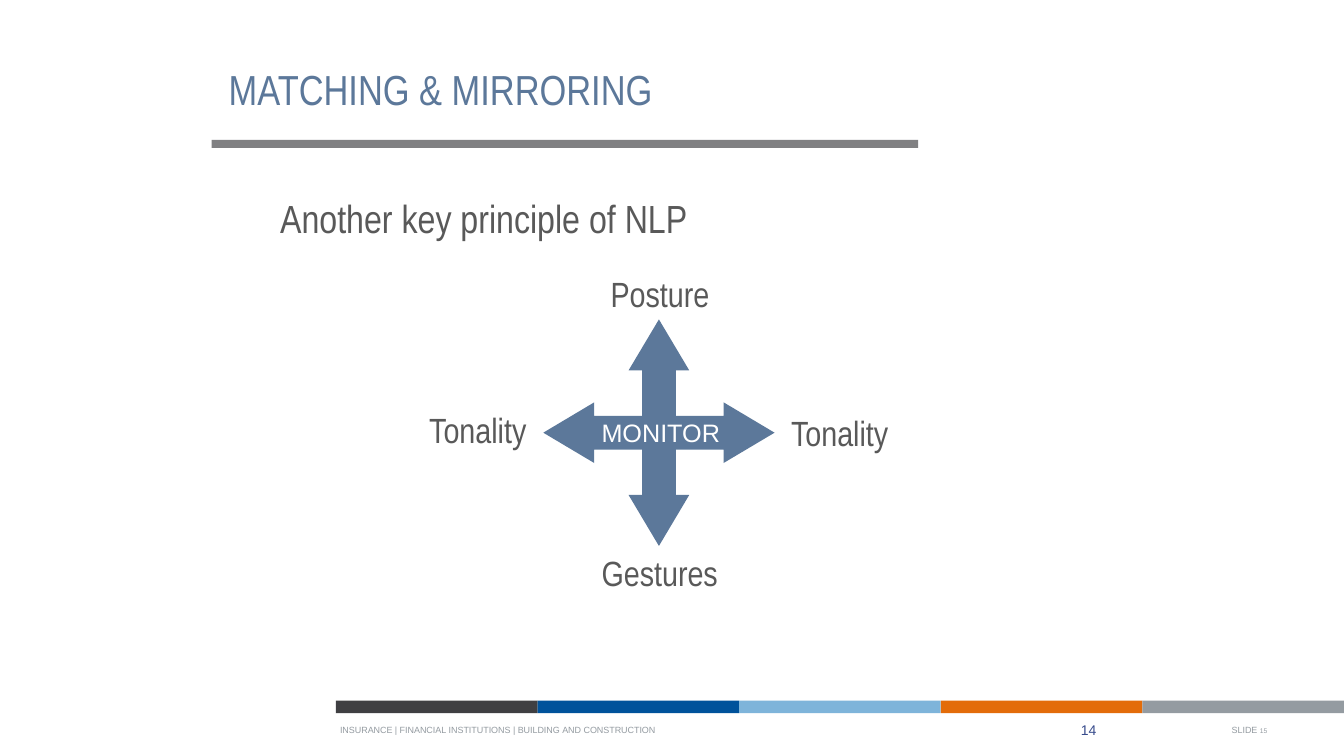
"""Build the Matching & Mirroring slide."""
from lxml import etree
from pptx import Presentation
from pptx.dml.color import RGBColor
from pptx.enum.shapes import MSO_SHAPE
from pptx.enum.text import MSO_ANCHOR, MSO_AUTO_SIZE, PP_ALIGN
from pptx.oxml.ns import qn
from pptx.util import Pt

RECT, QUAD_ARROW = MSO_SHAPE.RECTANGLE, MSO_SHAPE.QUAD_ARROW
LEFT, CENTER, RIGHT = PP_ALIGN.LEFT, PP_ALIGN.CENTER, PP_ALIGN.RIGHT
TOP, MIDDLE = MSO_ANCHOR.TOP, MSO_ANCHOR.MIDDLE
FIT, NO_FIT = MSO_AUTO_SIZE.SHAPE_TO_FIT_TEXT, MSO_AUTO_SIZE.NONE

SLATE = RGBColor(0x5C, 0x78, 0x9A)
TEXT_GRAY = RGBColor(0x59, 0x59, 0x59)
CHARCOAL = RGBColor(0x3F, 0x3F, 0x42)
BLUE = RGBColor(0x00, 0x52, 0x9B)
SKY = RGBColor(0x7E, 0xB4, 0xDA)
ORANGE = RGBColor(0xE3, 0x6C, 0x0A)
SILVER = RGBColor(0x94, 0x9B, 0xA1)
NAVY = RGBColor(0x37, 0x4B, 0x8C)
WHITE = RGBColor(0xFF, 0xFF, 0xFF)
SANS, NARROW = "Arial", "Arial Narrow"

TITLE = "MATCHING & MIRRORING"
PRINCIPLE = "Another key principle of NLP"
HUB = "MONITOR"
PAGE = "14"
LABELS = [
    ("Tonality", 299.5, 288),
    ("Tonality", 558, 290.2),
    ("Posture", 429, 190.8),
    ("Gestures", 422.6, 390.2),
]
SECTORS = "insurance | financial institutions | building and construction"
FOOTERS = [
    ([(SECTORS, 8)], (240, 512.6, 568, 13.7), LEFT, 2.9),
    ([("slide ", 8), ("15", 6)], (801.4, 512.6, 110.9, 13.7), RIGHT, 7.2),
]
BAND = [CHARCOAL, BLUE, SKY, ORANGE, SILVER]
BAND_LEFT, BAND_TOP, BAND_WIDTH, BAND_HEIGHT = 240, 500.4, 144, 9


def write(tf, runs, *, size=25, font=NARROW, color=TEXT_GRAY, align=LEFT,
          anchor=TOP, fit=FIT, small_caps=False):
    """Write a string, or (text, size) runs, as one formatted paragraph."""
    tf.word_wrap = True
    tf.auto_size = fit
    tf.vertical_anchor = anchor
    p = tf.paragraphs[0]
    p.alignment = align
    for text, run_size in [(runs, size)] if isinstance(runs, str) else runs:
        r = p.add_run()
        r.text = text
        r.font.size = Pt(run_size)
        r.font.name = font
        r.font.color.rgb = color
        if small_caps:
            r.font._element.set("cap", "small")
    return p


def add_text(slide, runs, box, **style):
    """Add a text box and return its frame."""
    tf = slide.shapes.add_textbox(*map(Pt, box)).text_frame
    write(tf, runs, **style)
    return tf


def add_block(slide, kind, box, color):
    """Add a flat filled shape."""
    sp = slide.shapes.add_shape(kind, *map(Pt, box))
    sp.shadow.inherit = False
    sp.fill.solid()
    sp.fill.fore_color.rgb = color
    sp.line.fill.background()
    return sp


def main():
    """Build and save the slide."""
    prs = Presentation()
    prs.slide_width, prs.slide_height = Pt(960), Pt(540)
    slide = prs.slides.add_slide(prs.slide_layouts[5])

    for runs, box, align, inset in FOOTERS:
        tf = add_text(slide, runs, box, font=SANS, color=SILVER, align=align,
                      small_caps=True)
        tf.margin_left, tf.margin_bottom = Pt(inset), 0
    for i, color in enumerate(BAND):
        left = BAND_LEFT + i * BAND_WIDTH
        add_block(slide, RECT, (left, BAND_TOP, BAND_WIDTH, BAND_HEIGHT), color)

    page = add_block(slide, RECT, (755.3, 512.6, 44.6, 18), WHITE)
    page.line.color.rgb = WHITE
    page.line.width = Pt(2)
    write(page.text_frame, PAGE, size=10, font=SANS, color=NAVY, align=CENTER,
          anchor=MIDDLE, fit=NO_FIT)

    title = slide.shapes.title
    title.left, title.top, title.width, title.height = map(
        Pt, (156.2, 46, 478.8, 72.7))
    p = write(title.text_frame, TITLE, size=30, color=SLATE, fit=NO_FIT)
    p.line_spacing = 0.9

    rule = add_block(slide, RECT, (151.2, 100, 504.7, 5.6), CHARCOAL)
    rule_color = rule._element.spPr.find(f".//{qn('a:srgbClr')}")
    etree.SubElement(rule_color, qn("a:alpha")).set("val", "66000")

    add_text(slide, PRINCIPLE, (193, 135.4, 553.7, 221.8), size=28)
    arrow = add_block(slide, QUAD_ARROW, (388.1, 228.2, 165.2, 161.8), SLATE)
    for i, value in enumerate((0.149, 0.134, 0.225)):
        arrow.adjustments[i] = value
    for text, left, top in LABELS:
        add_text(slide, text, (left, top, 140.4, 37.4))
    add_text(slide, HUB, (422.6, 294.5, 123.8, 28.8), size=18, font=SANS,
             color=WHITE)

    prs.save("out.pptx")


if __name__ == "__main__":
    main()
